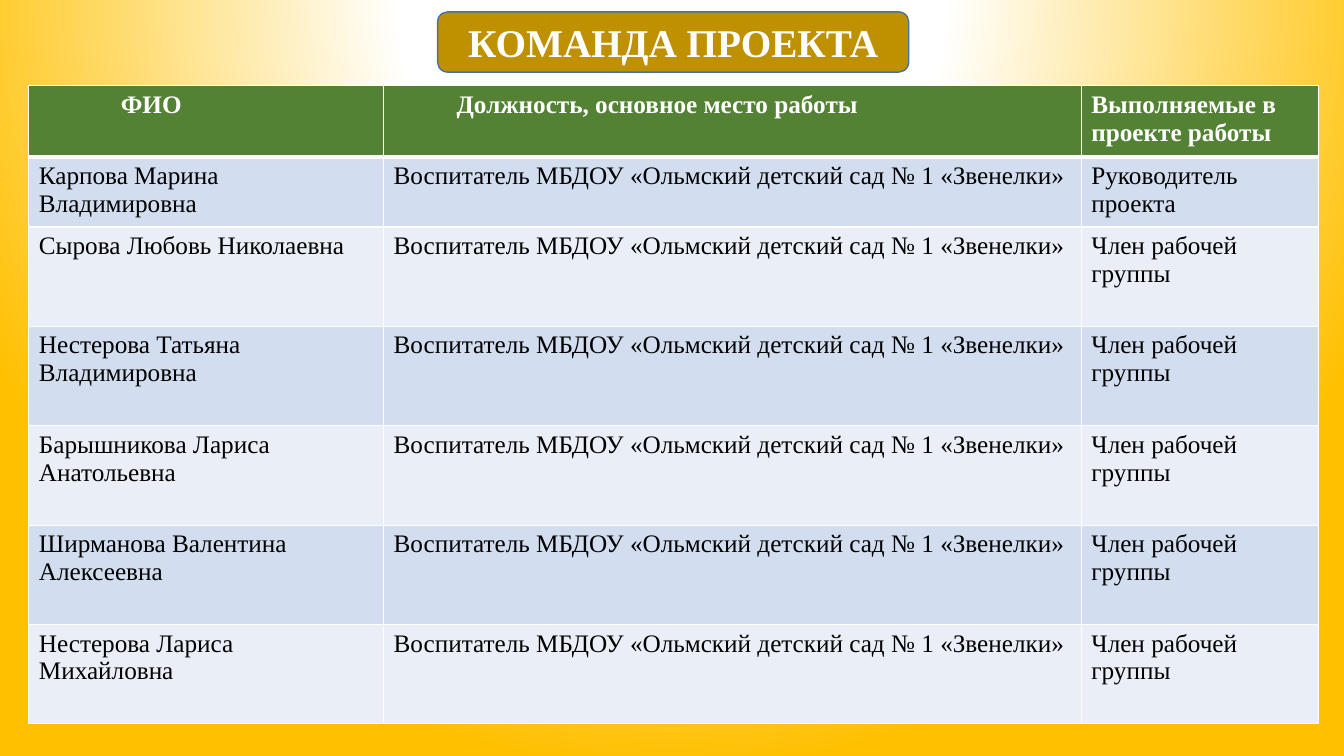
from pptx import Presentation
from pptx.util import Pt
from pptx.dml.color import RGBColor
from pptx.enum.shapes import MSO_SHAPE as Shape
from pptx.enum.text import PP_ALIGN as Align, MSO_ANCHOR as Anchor
from pptx.oxml import parse_xml
from pptx.oxml.ns import nsdecls, qn

# Content
TITLE = "КОМАНДА ПРОЕКТА"
HEAD = ("ФИО", "Должность, основное место работы", "Выполняемые в проекте работы")
POST = "Воспитатель МБДОУ «Ольмский детский сад № 1 «Звенелки»"
LEAD, MEMBER = "Руководитель проекта", "Член рабочей группы"
TEAM = [
    ("Карпова Марина Владимировна", LEAD),
    ("Сырова Любовь Николаевна", MEMBER),
    ("Нестерова Татьяна Владимировна", MEMBER),
    ("Барышникова Лариса Анатольевна", MEMBER),
    ("Ширманова Валентина Алексеевна", MEMBER),
    ("Нестерова Лариса Михайловна", MEMBER),
]
ROWS = [HEAD] + [(name, POST, role) for name, role in TEAM]

# Layout and colours
WIDTHS = (253.4, 498.4, 169.2)
HEIGHTS = [51, 50] + [71] * (len(TEAM) - 1)
INDENTS = (58.5, 45, 0)
PAD = 7.2
FONT = "Times New Roman"
WHITE, BLACK, GREEN = "FFFFFF", "000000", "548235"
BANDS = ("D2DEEF", "EAEFF7")
STOPS = ((0, WHITE), (35, WHITE), (100, "FFC000"))


def color(code):
    return RGBColor.from_string(code)


def paint(part, code):
    part.fill.solid()
    part.fill.fore_color.rgb = color(code)


def write(frame, text, size, code, bold, align=Align.LEFT):
    para = frame.paragraphs[0]
    para.alignment = align
    run = para.add_run()
    run.text = text
    font = run.font
    font.name, font.size, font.bold = FONT, Pt(size), bold
    font.color.rgb = color(code)


def border(cell, top, bottom):
    props = cell._tc.get_or_add_tcPr()
    sides = (("L", 1), ("R", 1), ("T", top), ("B", bottom))
    for spot, (side, width) in enumerate(sides):
        props.insert(spot, parse_xml(
            f'<a:ln{side} {nsdecls("a")} w="{Pt(width)}"><a:solidFill>'
            f'<a:srgbClr val="{WHITE}"/></a:solidFill></a:ln{side}>'))


deck = Presentation()
deck.slide_width, deck.slide_height = Pt(960), Pt(540)
slide = deck.slides.add_slide(deck.slide_layouts[6])

# Radial background
stops = "".join(f'<a:gs pos="{pos * 1000}"><a:srgbClr val="{code}"/></a:gs>'
                for pos, code in STOPS)
slide.element.find(qn("p:cSld")).insert(0, parse_xml(
    f'<p:bg {nsdecls("p", "a")}><p:bgPr><a:gradFill rotWithShape="1">'
    f'<a:gsLst>{stops}</a:gsLst><a:path path="circle">'
    '<a:fillToRect l="50000" t="-80000" r="50000" b="180000"/></a:path>'
    '</a:gradFill><a:effectLst/></p:bgPr></p:bg>'))

# Title plate
plate = slide.shapes.add_shape(
    Shape.ROUNDED_RECTANGLE, Pt(312.6), Pt(8.5), Pt(336.5), Pt(43))
plate.shadow.inherit = False
paint(plate, "BF9000")
plate.line.color.rgb = color("43739E")
plate.line.width = Pt(1)
plate.text_frame.vertical_anchor = Anchor.MIDDLE
write(plate.text_frame, TITLE, 28, WHITE, True, Align.CENTER)

# Team table
table = slide.shapes.add_table(
    len(ROWS), len(WIDTHS), Pt(20.6), Pt(61.2),
    Pt(sum(WIDTHS)), Pt(sum(HEIGHTS))).table
for col, width in zip(table.columns, WIDTHS):
    col.width = Pt(width)
for r, (texts, height) in enumerate(zip(ROWS, HEIGHTS)):
    table.rows[r].height = Pt(height)
    head = r == 0
    for c, text in enumerate(texts):
        cell = table.cell(r, c)
        paint(cell, GREEN if head else BANDS[(r - 1) % 2])
        border(cell, 3 if r == 1 else 1, 3 if head else 1)
        cell.margin_left = Pt(PAD + (INDENTS[c] if head else 0))
        write(cell.text_frame, text, 18, WHITE if head else BLACK, head)

deck.save("out.pptx")
